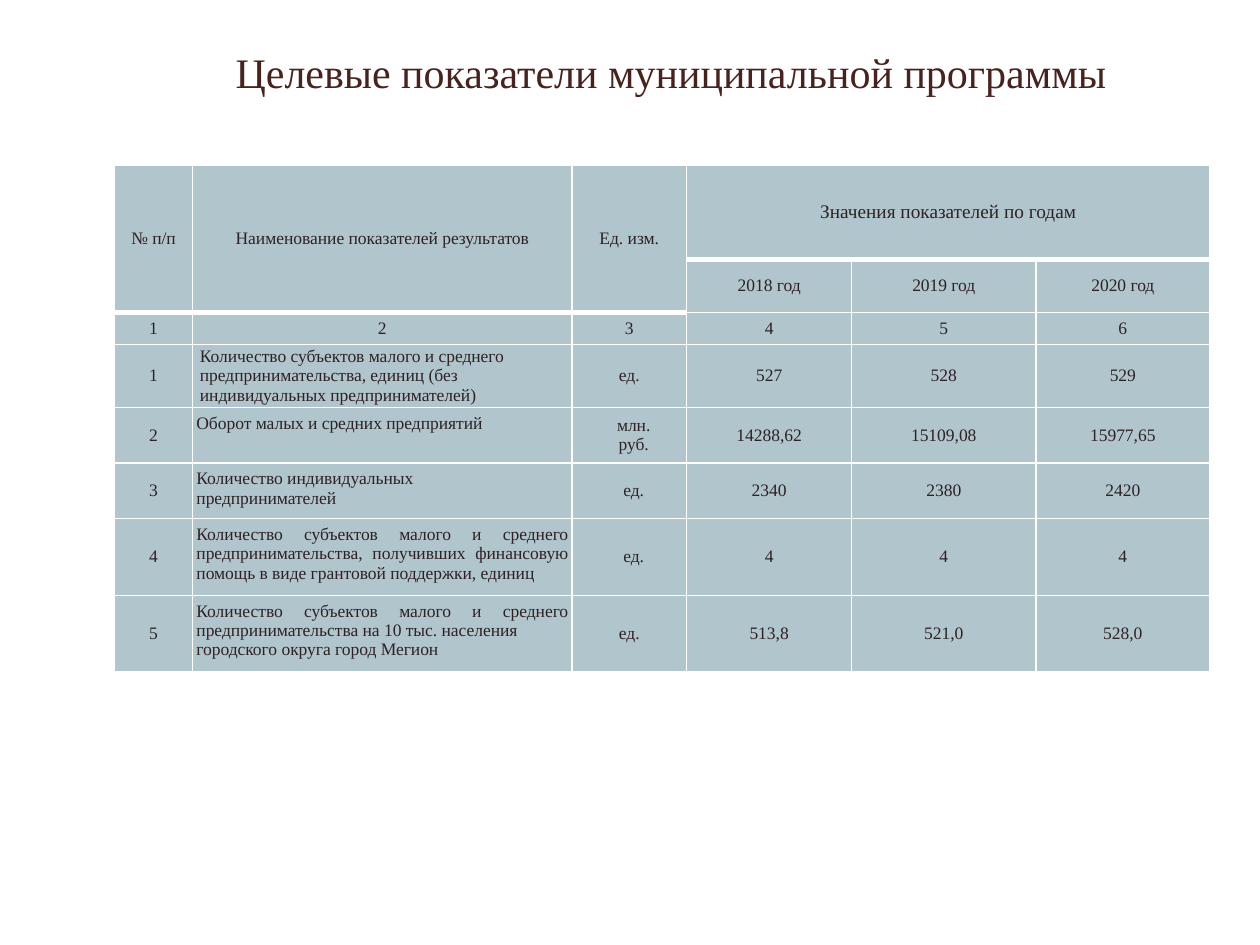
"""Builds a slide with a table of municipal programme targets."""
from dataclasses import dataclass

from lxml.etree import SubElement
from pptx import Presentation
from pptx.dml.color import RGBColor
from pptx.enum.text import MSO_ANCHOR as Anchor, MSO_AUTO_SIZE as AutoSize, PP_ALIGN as Align
from pptx.oxml.ns import qn
from pptx.util import Cm, Pt

FONT = "Times New Roman"
INK, TITLE_INK, FILL, LINE = "2E2224", "48231E", "B1C5CC", "FFFFFF"
COLS = [1.57, 7.65, 2.31, 3.33, 3.71, 3.51]
HEIGHTS = [1.9, 1.07, 0.64, 1.27, 1.12, 1.12, 1.55, 1.52]
FIRST_YEAR_COL, FIRST_ROOMY_ROW = 3, 4


@dataclass
class Indicator:
    name: str
    unit: str
    values: tuple[str, str, str]
    unit_indent: float = 0


INDICATORS = [
    Indicator("Количество субъектов малого и среднего предпринимательства, единиц "
              "(без индивидуальных предпринимателей)", "ед.", ("527", "528", "529")),
    Indicator("Оборот малых и средних предприятий", "млн.\nруб.",
              ("14288,62", "15109,08", "15977,65"), 0.18),
    Indicator("Количество индивидуальных\nпредпринимателей", "ед.",
              ("2340", "2380", "2420"), 0.18),
    Indicator("Количество субъектов малого и среднего предпринимательства, получивших "
              "финансовую помощь в виде грантовой поддержки, единиц", "ед.",
              ("4", "4", "4"), 0.18),
    Indicator("Количество субъектов малого и среднего предпринимательства на 10 тыс. "
              "населения\nгородского округа город Мегион", "ед.",
              ("513,8", "521,0", "528,0")),
]


def rgb(value: str) -> RGBColor:
    return RGBColor.from_string(value)


def write(tf, text: str, *, size: float = 10, color: str = INK,
          align=Align.CENTER, indent: float = 0) -> None:
    for i, line in enumerate(text.split("\n")):
        p = tf.add_paragraph() if i else tf.paragraphs[0]
        p.alignment = align
        if indent:
            p._p.get_or_add_pPr().set("indent", str(int(Cm(indent))))
        r = p.add_run()
        r.text = line
        r.font.name, r.font.size = FONT, Pt(size)
        r.font.color.rgb = rgb(color)


def add_border(cell, side: str, width: float) -> None:
    ln = SubElement(cell._tc.get_or_add_tcPr(), qn(f"a:ln{side}"), w=str(int(Pt(width))))
    SubElement(SubElement(ln, qn("a:solidFill")), qn("a:srgbClr"), val=LINE)


def style_cell(cell, row: int, col: int) -> None:
    header_rows = 1 if col >= FIRST_YEAR_COL else 2
    widths = {"L": 1, "R": 1, "T": 3 if row == header_rows else 1,
              "B": 3 if row < header_rows else 1}
    for side, width in widths.items():
        add_border(cell, side, width)
    cell.fill.solid()
    cell.fill.fore_color.rgb = rgb(FILL)
    roomy = row >= FIRST_ROOMY_ROW and col > 0
    cell.margin_left = cell.margin_right = Cm(0.08 if roomy else 0.15)
    cell.margin_top = cell.margin_bottom = Cm(0.13 if roomy else 0)
    cell.vertical_anchor = Anchor.TOP if roomy and col == 1 else Anchor.MIDDLE


def add_title(s, text: str) -> None:
    tf = s.shapes.add_textbox(Cm(4.5), Cm(0.81), Cm(22), Cm(1.27)).text_frame
    tf.word_wrap = True
    tf.auto_size = AutoSize.SHAPE_TO_FIT_TEXT
    write(tf, text, size=24, color=TITLE_INK, align=Align.LEFT)


def add_targets(s) -> None:
    frame = s.shapes.add_table(len(HEIGHTS), len(COLS), Cm(2.31), Cm(3.33),
                               Cm(sum(COLS)), Cm(sum(HEIGHTS)))
    table = frame.table
    table.first_row = table.horz_banding = False
    for column, width in zip(table.columns, COLS):
        column.width = Cm(width)
    for row, height in zip(table.rows, HEIGHTS):
        row.height = Cm(height)
    for r in range(len(HEIGHTS)):
        for c in range(len(COLS)):
            style_cell(table.cell(r, c), r, c)

    for c, text in enumerate(["№ п/п", "Наименование показателей результатов", "Ед. изм."]):
        table.cell(0, c).merge(table.cell(1, c))
        write(table.cell(0, c).text_frame, text)
    years = table.cell(0, FIRST_YEAR_COL)
    years.merge(table.cell(0, len(COLS) - 1))
    write(years.text_frame, "Значения показателей по годам", size=11)
    for c in range(FIRST_YEAR_COL, len(COLS)):
        write(table.cell(1, c).text_frame, f"{2018 + c - FIRST_YEAR_COL} год")
    for c in range(len(COLS)):
        write(table.cell(2, c).text_frame, str(c + 1))

    for number, item in enumerate(INDICATORS, 1):
        row = number + 2
        write(table.cell(row, 0).text_frame, str(number))
        write(table.cell(row, 1).text_frame, item.name,
              align=Align.JUSTIFY if row >= FIRST_ROOMY_ROW else Align.LEFT)
        write(table.cell(row, 2).text_frame, item.unit, indent=item.unit_indent)
        for c, value in enumerate(item.values, FIRST_YEAR_COL):
            write(table.cell(row, c).text_frame, value)


def main() -> None:
    prs = Presentation()
    prs.slide_width, prs.slide_height = Cm(25.4), Cm(19.05)
    s = prs.slides.add_slide(prs.slide_layouts[6])
    add_title(s, "Целевые показатели муниципальной программы")
    add_targets(s)
    prs.save("out.pptx")


if __name__ == "__main__":
    main()
